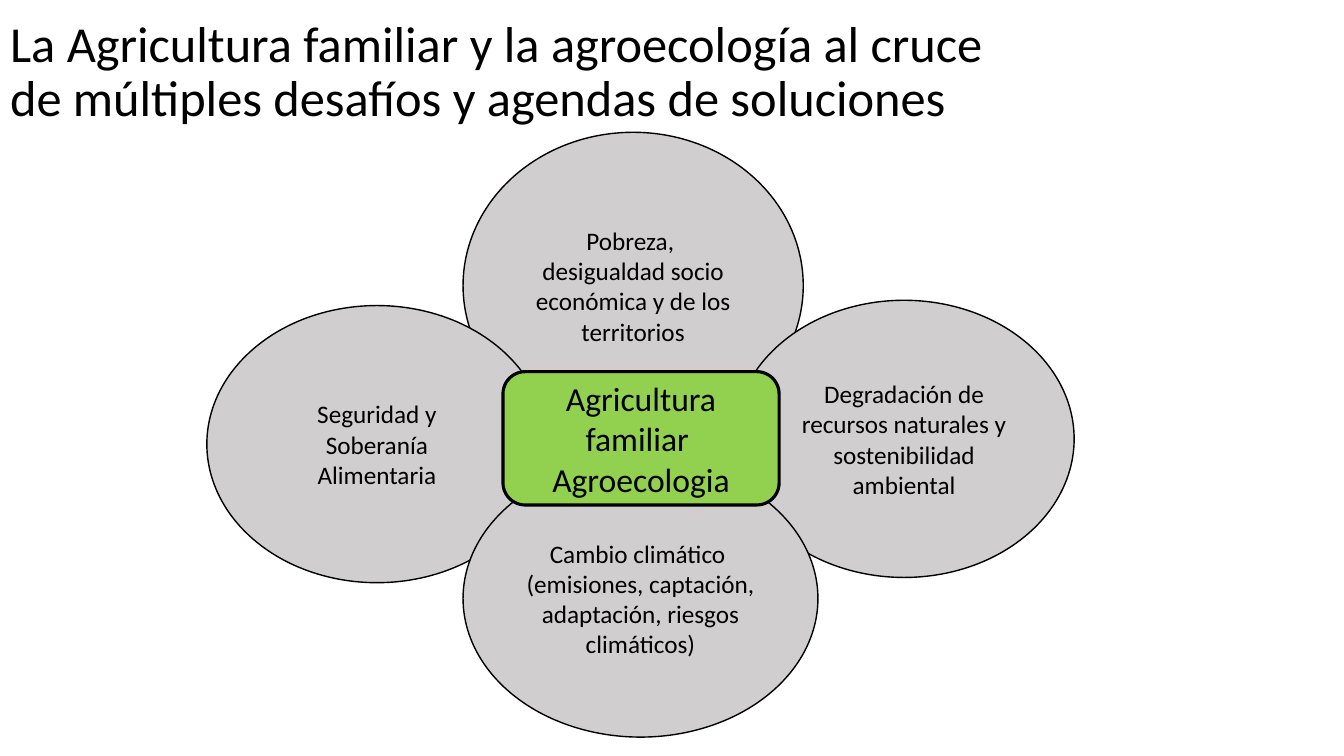
from dataclasses import dataclass

from pptx import Presentation
from pptx import util as u
from pptx.dml.color import RGBColor
from pptx.enum import shapes, text

EMU_PER_PX = 9525


def px(length):
    """Turn whole pixels into EMU."""
    return u.Emu(length * EMU_PER_PX)


@dataclass(frozen=True)
class Theme:
    """Colours, font and type sizes of the slide."""
    font: str = "Calibri"
    ink: RGBColor = RGBColor(0x00, 0x00, 0x00)
    petal: RGBColor = RGBColor(0xD0, 0xCE, 0xCE)
    core: RGBColor = RGBColor(0x92, 0xD0, 0x50)
    title_size: int = 36
    core_size: int = 24
    petal_size: int = 18


class FlowerSlide:
    """Draws styled elements on the current page."""

    def __init__(self, deck, theme):
        """Add a page with a title placeholder."""
        self.theme = theme
        self.page = deck.slides.add_slide(deck.slide_layouts[5])

    def set_words(self, frame, words, size, align):
        """Fill a text frame with uniformly styled paragraphs."""
        frame.text = words
        frame.word_wrap = True
        frame.vertical_anchor = text.MSO_ANCHOR.MIDDLE
        for para in frame.paragraphs:
            para.alignment = align
            para.font.name = self.theme.font
            para.font.size = u.Pt(size)
            para.font.color.rgb = self.theme.ink

    def title(self, words, left, top, width, height):
        """Place and format the title placeholder."""
        box = self.page.shapes.title
        box.left, box.top, box.width, box.height = map(px, (left, top, width, height))
        self.set_words(box.text_frame, words, self.theme.title_size, text.PP_ALIGN.LEFT)
        box.text_frame.auto_size = text.MSO_AUTO_SIZE.NONE
        box.text_frame.paragraphs[0].line_spacing = 0.9

    def block(self, kind, words, bounds, fill, size, line):
        """Add an outlined shape with centred text."""
        box = self.page.shapes.add_shape(kind, *map(px, bounds))
        box.shadow.inherit = False
        box.fill.solid()
        box.fill.fore_color.rgb = fill
        box.line.color.rgb = self.theme.ink
        box.line.width = u.Pt(line)
        self.set_words(box.text_frame, words, size, text.PP_ALIGN.CENTER)

    def petal(self, words, *bounds):
        """Add one challenge as a grey ellipse."""
        self.block(shapes.MSO_SHAPE.OVAL, words, bounds,
                   self.theme.petal, self.theme.petal_size, 1)

    def core(self, words, *bounds):
        """Add the central theme as a green rounded box."""
        self.block(shapes.MSO_SHAPE.ROUNDED_RECTANGLE, words, bounds,
                   self.theme.core, self.theme.core_size, 2.25)


def main():
    """Build and save the deck."""
    deck = Presentation()
    deck.slide_width, deck.slide_height = px(1280), px(720)
    flower = FlowerSlide(deck, Theme())
    flower.title("La Agricultura familiar y la agroecología al cruce de múltiples "
                 "desafíos y agendas de soluciones", 0, 0, 958, 139)
    flower.petal("Pobreza, \vdesigualdad socio económica y de los territorios",
                 441, 126, 324, 292)
    flower.petal("Seguridad y Soberanía Alimentaria", 197, 291, 324, 264)
    flower.petal("Degradación de recursos naturales y sostenibilidad ambiental",
                 699, 286, 324, 264)
    flower.petal("Cambio climático \n(emisiones, captación, adaptación, "
                 "riesgos climáticos)", 441, 438, 338, 264)
    flower.core("Agricultura familiar \nAgroecologia", 479, 354, 263, 127)
    deck.save("out.pptx")


if __name__ == "__main__":
    main()
